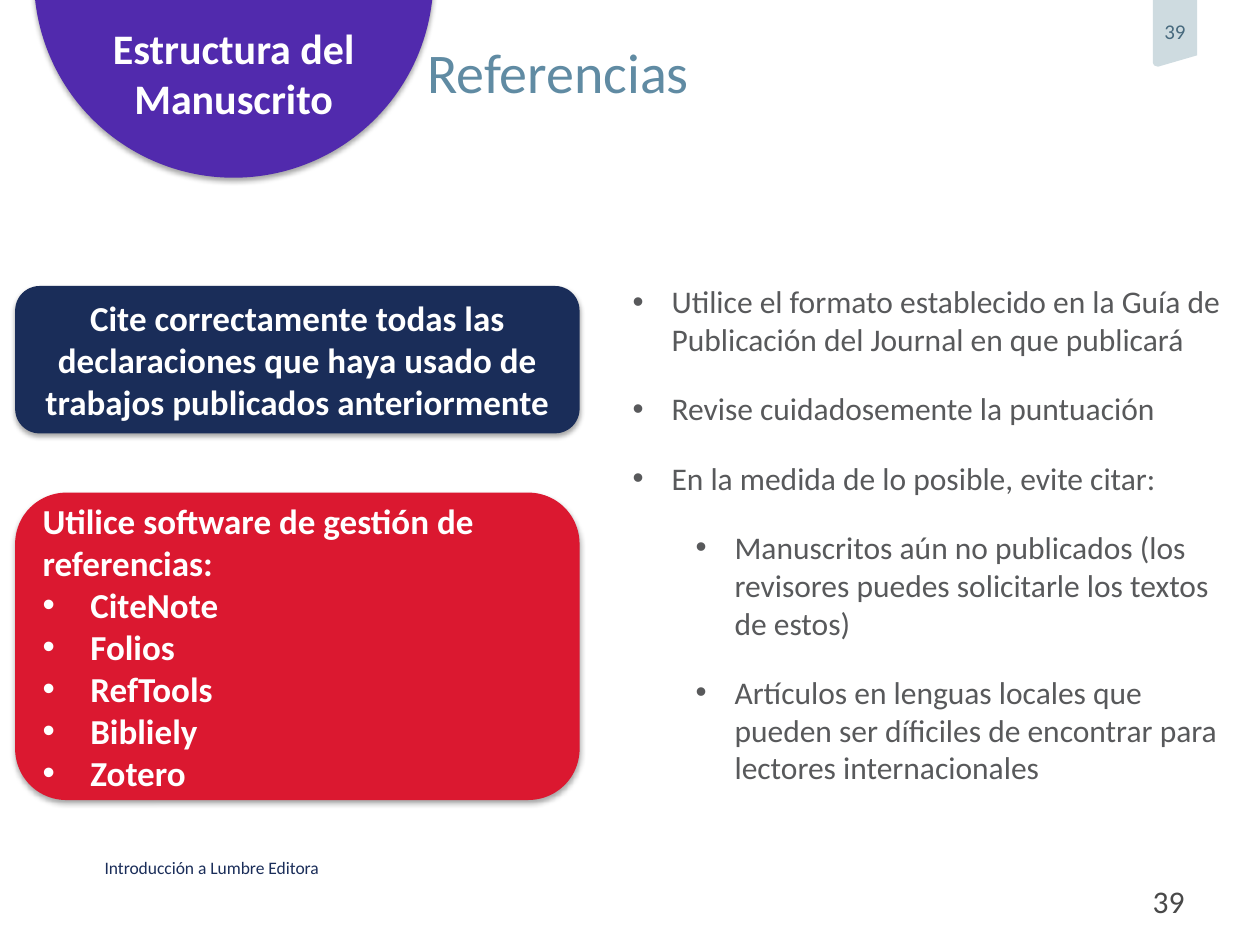
from dataclasses import dataclass
from typing import Optional

from lxml.etree import SubElement
from pptx import Presentation
from pptx.dml.color import RGBColor
from pptx.enum.shapes import MSO_SHAPE as Preset
from pptx.enum.text import MSO_ANCHOR as Anchor, MSO_AUTO_SIZE as AutoSize, PP_ALIGN as Align
from pptx.oxml.ns import qn
from pptx.util import Inches, Pt


@dataclass(frozen=True)
class Theme:
    font: str = "Calibri"
    navy: str = "1A2D59"
    red: str = "DB1830"
    purple: str = "512AAD"
    tag: str = "CEDBE0"
    tag_text: str = "486A7E"
    title: str = "608BA3"
    body: str = "58595B"
    number: str = "494949"
    white: str = "FFFFFF"
    title_size: int = 32
    section_size: int = 24
    card_size: int = 20
    body_size: int = 18
    tag_size: int = 12
    footer_size: int = 10


@dataclass(frozen=True)
class Box:
    left: float
    top: float
    width: float
    height: float

    def lengths(self) -> tuple:
        return tuple(Inches(v) for v in (self.left, self.top, self.width, self.height))


@dataclass(frozen=True)
class Style:
    size: int
    color: str
    bold: bool = False
    align: Align = Align.LEFT


@dataclass(frozen=True)
class Line:
    text: str
    indent: Optional[float] = None  # text indent of a bulleted line
    hanging: float = 0
    level: int = 0
    space_before: int = 0


@dataclass(frozen=True)
class Card:
    box: Box
    fill: str
    style: Style
    lines: list


THEME = Theme()
SLIDE_NUMBER = "39"
CARD_LEFT, CARD_WIDTH = 0.12, 4.48
TOOLS = ["CiteNote", "Folios", "RefTools", "Bibliely", "Zotero"]

CARDS = [
    Card(Box(CARD_LEFT, 2.27, CARD_WIDTH, 1.17), THEME.navy,
         Style(THEME.card_size, THEME.white, True, Align.CENTER),
         [Line("Cite correctamente todas las declaraciones que haya usado de "
               "trabajos publicados anteriormente")]),
    Card(Box(CARD_LEFT, 3.91, CARD_WIDTH, 2.44), THEME.red,
         Style(THEME.card_size, THEME.white, True),
         [Line("Utilice software de gestión de referencias:")]
         + [Line(tool, 0.38, 0.38) for tool in TOOLS]),
]

ADVICE = [
    (0, "Utilice el formato establecido en la Guía de Publicación del Journal en que publicará"),
    (0, "Revise cuidadosemente la puntuación"),
    (0, "En la medida de lo posible, evite citar:"),
    (1, "Manuscritos aún no publicados (los revisores puedes solicitarle los textos de estos)"),
    (1, "Artículos en lenguas locales que pueden ser díficiles de encontrar para "
        "lectores internacionales"),
]


def add_bullet(paragraph, indent: float, hanging: float) -> None:
    properties = paragraph._p.get_or_add_pPr()
    properties.set("marL", str(Inches(indent)))
    properties.set("indent", str(-Inches(hanging)))
    SubElement(properties, qn("a:buFont"), typeface="Arial")
    SubElement(properties, qn("a:buChar"), char="•")


def write(frame, lines: list, style: Style, anchor: Anchor = Anchor.TOP,
          wrap: bool = True, margin: Optional[float] = None) -> None:
    frame.word_wrap = wrap
    frame.auto_size = AutoSize.NONE
    frame.vertical_anchor = anchor
    if margin is not None:
        frame.margin_left = frame.margin_right = Inches(margin)
        frame.margin_top = frame.margin_bottom = Inches(margin)
    for index, line in enumerate(lines):
        paragraph = frame.add_paragraph() if index else frame.paragraphs[0]
        paragraph.text = line.text
        paragraph.level = line.level
        if line.indent is not None:
            add_bullet(paragraph, line.indent, line.hanging)
        paragraph.alignment = style.align
        paragraph.space_before = Pt(line.space_before if index else 0)
        font = paragraph.font
        font.name, font.size, font.bold = THEME.font, Pt(style.size), style.bold
        font.color.rgb = RGBColor.from_string(style.color)


def paint(shape, color: str, shadow: bool = False) -> None:
    shape.fill.solid()
    shape.fill.fore_color.rgb = RGBColor.from_string(color)
    shape.line.fill.background()
    shape.shadow.inherit = False
    if shadow:
        effects = shape._element.spPr.find(qn("a:effectLst"))
        outer = SubElement(effects, qn("a:outerShdw"), blurRad=str(Pt(3.1)),
                           dist=str(Pt(1.8)), dir="5400000", rotWithShape="0")
        black = SubElement(outer, qn("a:srgbClr"), val="000000")
        SubElement(black, qn("a:alpha"), val="35000")


def add_text(slide, box: Box, text: str, style: Style, **layout) -> None:
    write(slide.shapes.add_textbox(*box.lengths()).text_frame, [Line(text)], style, **layout)


def fill_placeholder(shape, box: Box, lines: list, style: Style, **layout) -> None:
    shape.left, shape.top, shape.width, shape.height = box.lengths()
    write(shape.text_frame, lines, style, **layout)


def add_section_badge(slide) -> None:
    badge = slide.shapes.add_shape(Preset.CHORD, *Box(0.27, -1.76, 3.17, 3.17).lengths())
    badge.rotation = 292
    paint(badge, THEME.purple, shadow=True)
    add_text(slide, Box(0.69, 0.13, 2.33, 0.91), "Estructura del Manuscrito",
             Style(THEME.section_size, THEME.white, True, Align.CENTER))


def add_page_tag(slide) -> None:
    outline = [(9.15, 0), (9.5, 0), (9.5, 0.44), (9.19, 0.53), (9.16, 0.52), (9.15, 0.5)]
    points = [(Inches(x), Inches(y)) for x, y in outline]
    builder = slide.shapes.build_freeform(*points[0])
    builder.add_line_segments(points[1:], close=True)
    tag = builder.convert_to_shape()
    paint(tag, THEME.tag)
    write(tag.text_frame, [Line(SLIDE_NUMBER)],
          Style(THEME.tag_size, THEME.tag_text, align=Align.CENTER),
          Anchor.MIDDLE, wrap=False, margin=0)
    tag.text_frame.margin_bottom = Inches(0.04)


def add_card(slide, card: Card) -> None:
    shape = slide.shapes.add_shape(Preset.ROUNDED_RECTANGLE, *card.box.lengths())
    paint(shape, card.fill, shadow=True)
    write(shape.text_frame, card.lines, card.style, Anchor.MIDDLE)


def main() -> None:
    presentation = Presentation()
    presentation.slide_width, presentation.slide_height = Inches(10), Inches(7.5)
    slide = presentation.slides.add_slide(presentation.slide_layouts[1])

    add_text(slide, Box(0.83, 6.8, 3.55, 0.17), "Introducción a Lumbre Editora",
             Style(THEME.footer_size, THEME.navy), anchor=Anchor.MIDDLE, margin=0)
    add_page_tag(slide)
    add_section_badge(slide)
    add_text(slide, Box(7.17, 6.95, 2.33, 0.4), SLIDE_NUMBER,
             Style(THEME.body_size, THEME.number, align=Align.RIGHT))
    fill_placeholder(slide.shapes.title, Box(3.39, 0.3, 6.42, 0.93), [Line("Referencias")],
                     Style(THEME.title_size, THEME.title), margin=0)
    for card in CARDS:
        add_card(slide, card)
    advice = [Line(text, 0.31 + 0.5 * level, 0.31, level, 18) for level, text in ADVICE]
    fill_placeholder(slide.placeholders[1], Box(4.92, 2.19, 5, 4.14), advice,
                     Style(THEME.body_size, THEME.body))
    presentation.save("out.pptx")


if __name__ == "__main__":
    main()
